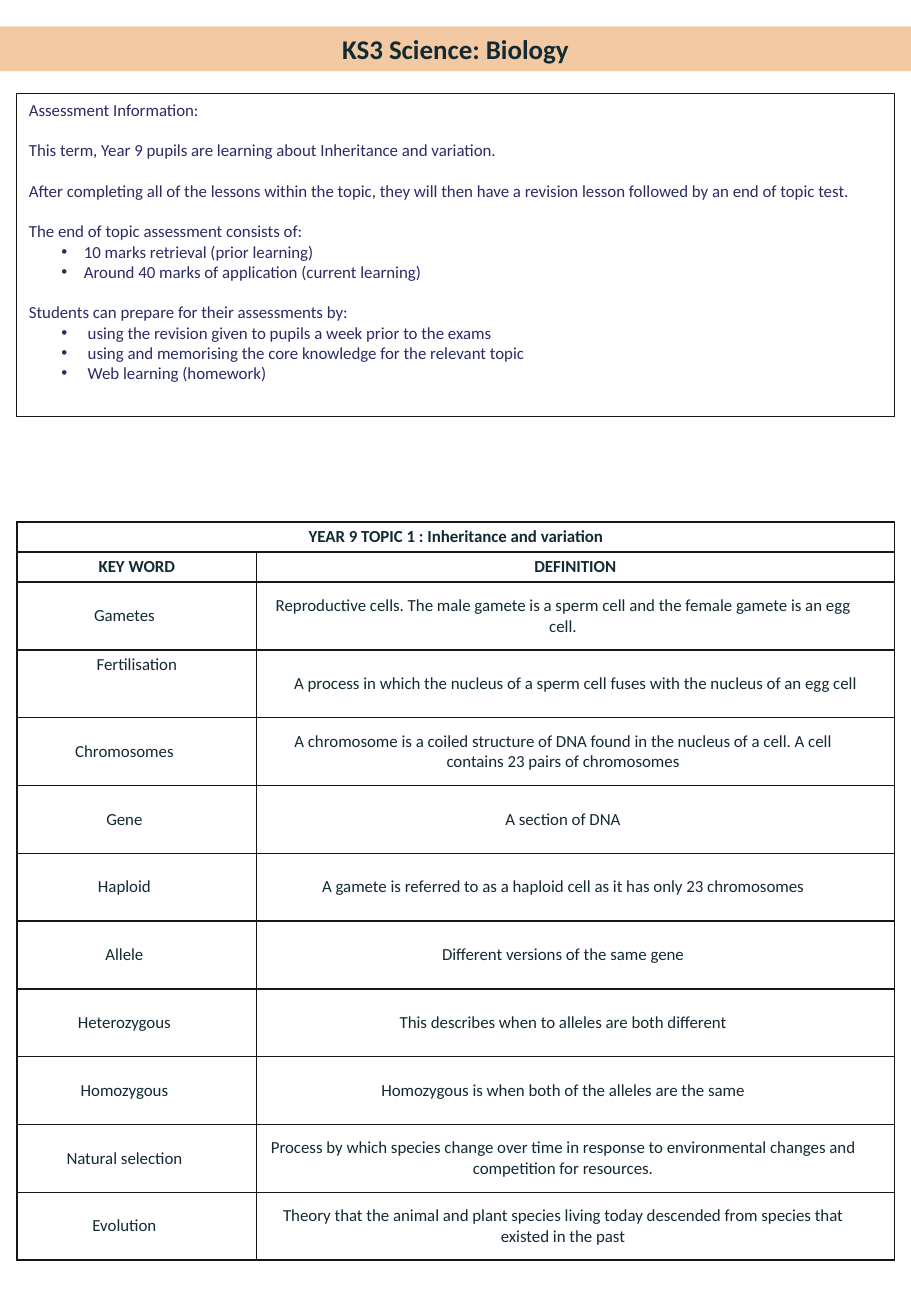
import pptx
import pptx.util
import pptx.dml.color
import pptx.enum.text
import pptx.oxml
import pptx.oxml.ns
from lxml import etree

Cm, Pt = pptx.util.Cm, pptx.util.Pt
RGB = pptx.dml.color.RGBColor.from_string
ALIGN = pptx.enum.text.PP_ALIGN
ANCHOR = pptx.enum.text.MSO_ANCHOR
qn = pptx.oxml.ns.qn

THEME = {
    "band": RGB("F3C9A4"),
    "line": RGB("181717"),
    "title": {"name": "Calibri", "size": Pt(16), "bold": True, "color": RGB("142A33")},
    "info": {"name": "Calibri", "size": Pt(10), "bold": False, "color": RGB("2A2C65")},
    "head": {"name": "Calibri", "size": Pt(10), "bold": True, "color": RGB("142A33")},
    "cell": {"name": "Calibri", "size": Pt(10), "bold": False, "color": RGB("142A33")},
}


def write(p, text, style, align):
    p.alignment = align
    r = p.add_run()
    r.text = text
    for name, value in THEME[style].items():
        if name == "color":
            r.font.color.rgb = value
        else:
            setattr(r.font, name, value)


def place(sp, box, anchor):
    for name, value in zip(("left", "top", "width", "height"), box):
        setattr(sp, name, Cm(value))
    frame = {"word_wrap": True, "vertical_anchor": anchor,
             "auto_size": pptx.enum.text.MSO_AUTO_SIZE.NONE}
    for name, value in frame.items():
        setattr(sp.text_frame, name, value)
    return sp.text_frame


prs = pptx.Presentation()
prs.slide_width, prs.slide_height = Cm(19.05), Cm(27.51)
s = prs.slides.add_slide(prs.slide_layouts[1])

title = s.shapes.title
tf = place(title, (0, 0.55, 19.05, 0.94), ANCHOR.MIDDLE)
title.fill.solid()
title.fill.fore_color.rgb = THEME["band"]
write(tf.paragraphs[0], "KS3 Science: Biology", "title", ALIGN.CENTER)

info = s.placeholders[1]
tf = place(info, (0.35, 1.95, 18.35, 6.76), ANCHOR.TOP)
info.line.color.rgb = THEME["line"]
info.line.width = Pt(0.75)

sections = [
    ("Assessment Information:", 0, []),
    ("This term, Year 9 pupils are learning about Inheritance and variation.", 0, []),
    ("After completing all of the lessons within the topic, they will then have "
     "a revision lesson followed by an end of topic test.", 0, []),
    ("The end of topic assessment consists of:", 1.15, [
        "10 marks retrieval (prior learning)",
        "Around 40 marks of application (current learning)"]),
    ("Students can prepare for their assessments by:", 1.23, [
        "using the revision given to pupils a week prior to the exams",
        "using and memorising the core knowledge for the relevant topic",
        "Web learning (homework)"]),
]
bullet_left = 0.68
for i, (lead, text_left, items) in enumerate(sections):
    for j, text in enumerate([lead] + items):
        p = tf.add_paragraph() if i or j else tf.paragraphs[0]
        pPr = p._p.get_or_add_pPr()
        pPr.set("marL", str(Cm(text_left if j else 0)))
        pPr.set("indent", str(Cm(bullet_left - text_left if j else 0)))
        if j:
            etree.SubElement(pPr, qn("a:buFont")).set("typeface", "Arial")
            etree.SubElement(pPr, qn("a:buChar")).set("char", "•")
        else:
            etree.SubElement(pPr, qn("a:buNone"))
        p.space_before = Pt(12 if i and not j else 0)
        write(p, text, "info", ALIGN.LEFT)

rows = [
    ("YEAR 9 TOPIC 1 : Inheritance and variation", ""),
    ("KEY WORD", "DEFINITION"),
    ("Gametes", "Reproductive cells. The male gamete is a sperm cell and the female gamete is an egg cell."),
    ("Fertilisation", "A process in which the nucleus of a sperm cell fuses with the nucleus of an egg cell"),
    ("Chromosomes", "A chromosome is a coiled structure of DNA found in the nucleus of a cell. "
     "A cell contains 23 pairs of chromosomes"),
    ("Gene", "A section of DNA"),
    ("Haploid", "A gamete is referred to as a haploid cell as it has only 23 chromosomes"),
    ("Allele", "Different versions of the same gene"),
    ("Heterozygous", "This describes when to alleles are both different"),
    ("Homozygous", "Homozygous is when both of the alleles are the same"),
    ("Natural selection", "Process by which species change over time in response to "
     "environmental changes and competition for resources."),
    ("Evolution", "Theory that the animal and plant species living today descended "
     "from species that existed in the past"),
]
head_rows = 2
table = s.shapes.add_table(len(rows), 2, Cm(0.36), Cm(10.91), Cm(18.34), Cm(15.43)).table
table.first_row = table.horz_banding = False
for column, width in zip(table.columns, (5, 13.34)):
    column.width = Cm(width)
table.cell(0, 0).merge(table.cell(0, 1))

for i, texts in enumerate(rows):
    is_head = i < head_rows
    table.rows[i].height = Cm(0.63) if is_head else Cm(14.17) // 10
    for j, text in enumerate(texts):
        cell = table.cell(i, j)
        tcPr = cell._tc.get_or_add_tcPr()
        for side in ("a:lnL", "a:lnR", "a:lnT", "a:lnB"):
            ln = etree.SubElement(tcPr, qn(side), w=str(Pt(1)))
            fill = etree.SubElement(ln, qn("a:solidFill"))
            etree.SubElement(fill, qn("a:srgbClr"), val=str(THEME["line"]))
        cell.fill.background()
        is_top = text == "Fertilisation"
        is_centred = is_head or texts[0] == "Fertilisation"
        layout = {
            "vertical_anchor": ANCHOR.TOP if is_top else ANCHOR.MIDDLE,
            "margin_left": Cm(0.18),
            "margin_right": Cm(0.18 if is_centred else 0.7),
            "margin_top": Cm(0.1 if is_head or is_top else 0),
            "margin_bottom": Cm(0.1 if is_head else 0),
        }
        for name, value in layout.items():
            setattr(cell, name, value)
        if text:
            write(cell.text_frame.paragraphs[0], text, "head" if is_head else "cell", ALIGN.CENTER)

prs.save("out.pptx")
